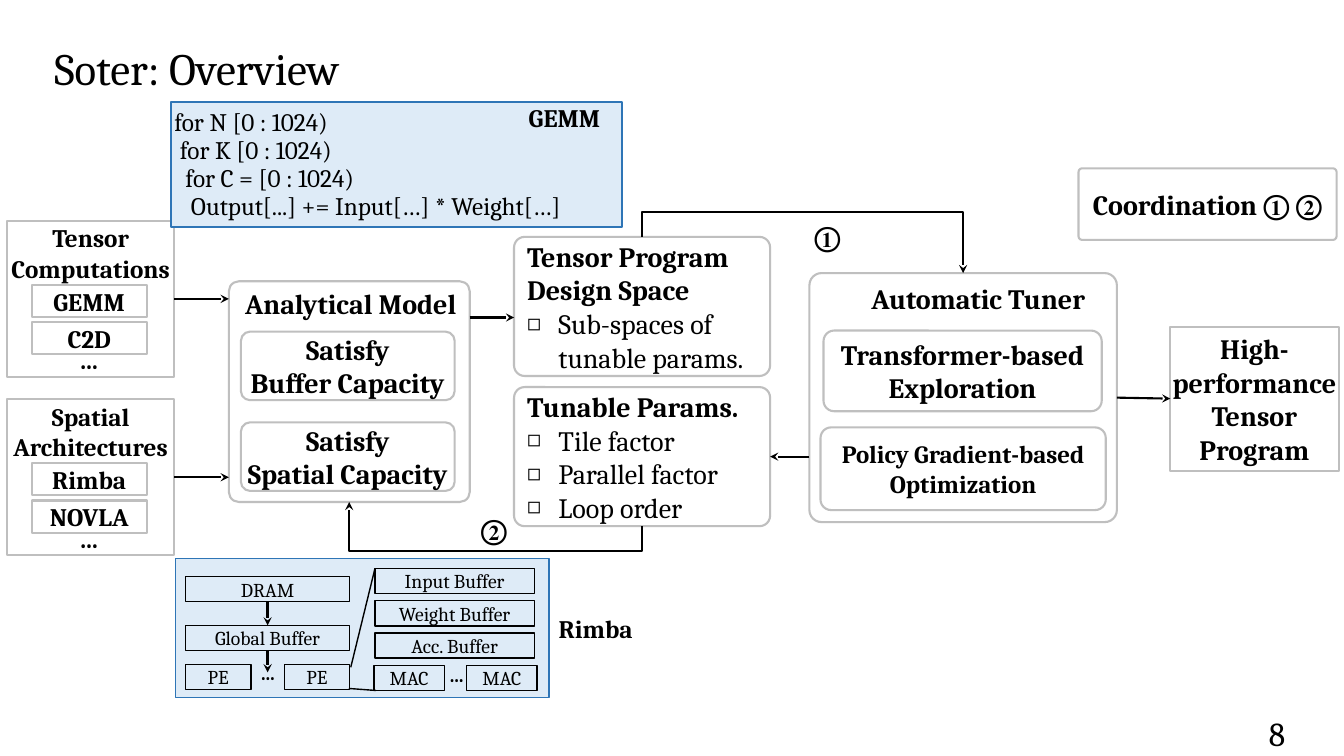
"""Builds the Soter overview slide: tensor program tuning flow and its example inputs."""
import dataclasses
import typing

import lxml.etree
import pptx
import pptx.dml.color
import pptx.enum.shapes
import pptx.enum.text
import pptx.oxml.ns
import pptx.util

BLACK = pptx.dml.color.RGBColor(0x00, 0x00, 0x00)
GREY = pptx.dml.color.RGBColor(0xBF, 0xBF, 0xBF)
BLUE = pptx.dml.color.RGBColor(0x2E, 0x75, 0xB6)
PALE_BLUE = pptx.dml.color.RGBColor(0xDE, 0xEB, 0xF7)
FONT = "Cambria"
CELL = pptx.util.Inches(0.1)
SLIDE_COLUMNS, SLIDE_ROWS = 133.33, 75
ELBOW_REACH = 2.5
ALIGN = pptx.enum.text.PP_ALIGN
SHAPE = pptx.enum.shapes.MSO_SHAPE
CONNECTOR = pptx.enum.shapes.MSO_CONNECTOR


@dataclasses.dataclass(frozen=True)
class Box:
    """A box or plain label, placed in grid columns and rows."""
    column: float
    row: float
    width: float
    height: float
    lines: tuple[str, ...] = ()
    size: float = 20
    bold: bool = True
    line: typing.Optional[pptx.dml.color.RGBColor] = GREY
    weight: float = 1.5
    radius: float = 0
    fill: typing.Optional[pptx.dml.color.RGBColor] = None
    name: str = ""


class Spot(typing.NamedTuple):
    """A free point on the grid."""
    column: float
    row: float


class Joint(typing.NamedTuple):
    """The middle of one side of a named box."""
    name: str
    side: int


class Link(typing.NamedTuple):
    """A line between two ends."""
    start: Spot | Joint
    end: Spot | Joint
    weight: float = 1.5
    arrow: bool = True


class ListBlock(typing.NamedTuple):
    """Heading lines followed by bulleted items."""
    row: float
    headings: tuple[str, ...]
    items: tuple[str, ...]


def grid(cells: float) -> int:
    """Turn grid cells into a length."""
    return round(cells * CELL)


def label(column: float, row: float, width: float, height: float, *lines: str,
          size: float = 20, bold: bool = True) -> Box:
    """Describe text with no outline."""
    return Box(column, row, width, height, lines, size, bold, line=None)


def part(column: float, row: float, width: float, text: str, name: str = "") -> Box:
    """Describe one hardware part of the accelerator."""
    return Box(column, row, width, 2.5, (text,), 14, False, BLACK, 1, name=name)


def input_panel(row: float, title: tuple[str, ...], items: tuple[str, ...], name: str) -> list[Box]:
    """Describe an input panel with its title, items and ellipsis."""
    entries = [Box(3.15, row + 6.35 + 3.7 * index, 11.4, 3.2, (item,), 18)
               for index, item in enumerate(items)]
    return [Box(0.7, row, 16.6, 15.5, name=name), label(0.7, row, 16.6, 6.4, *title, size=18),
            *entries, label(3.15, row + 12.2, 11.4, 3.2, "…", size=18)]


BOXES = [
    *input_panel(21.9, ("Tensor", "Computations"), ("GEMM", "C2D"), "computations"),
    *input_panel(39.6, ("Spatial", "Architectures"), ("Rimba", "NOVLA"), "architectures"),
    Box(51, 23.5, 25.4, 13.8, radius=1.05, name="design space"),
    Box(51, 38.4, 25.4, 13.8, radius=1.05, name="parameters"),
    Box(80.3, 27.1, 30.5, 24.7, radius=1.2, name="tuner"),
    label(81.8, 27.1, 30.5, 5, "Automatic Tuner"),
    Box(81.7, 32.8, 27.6, 8, ("Transformer-based", "Exploration"), radius=1.05),
    Box(81.4, 42.4, 28.3, 8.2, ("Policy Gradient-based", "Optimization"), 17.8, radius=1.05),
    Box(116.1, 32.4, 16.7, 14.3, ("High-performance", "Tensor Program"), name="program"),
    Box(107, 16.7, 25.6, 7.1, ("Coordination ① ②",), radius=0.35),
    label(80.1, 21.4, 4, 4, "①"),
    label(47, 50.5, 4, 4, "②"),
    Box(22.7, 27.9, 23.9, 21.9, radius=1, name="model"),
    label(22.7, 27.6, 24.2, 5, "Analytical Model"),
    Box(23.9, 32.9, 21.2, 6.8, ("Satisfy", "Buffer Capacity"), radius=0.9),
    Box(23.9, 41.9, 21.2, 6.8, ("Satisfy", "Spatial Capacity"), radius=0.9),
    Box(17, 10.1, 44.7, 12.4, line=BLUE, weight=1.25, fill=PALE_BLUE, name="code"),
    label(51.5, 9.7, 9, 4, "GEMM", size=18),
    Box(17.4, 55.4, 37.1, 13.8, line=BLUE, weight=1.25, fill=PALE_BLUE),
    label(54.6, 60.3, 9, 4, "Rimba", size=18),
    part(18.4, 57.2, 16.3, "DRAM", "memory"),
    part(18.4, 62.05, 16.3, "Global Buffer", "global buffer"),
    *[part(column, 65.9, 6.5, "PE") for column in (18.4, 28.2)],
    *[part(37.2, 56.4 + 3.2 * index, 15.8, f"{kind} Buffer")
      for index, kind in enumerate(("Input", "Weight", "Acc."))],
    *[part(column, 66, 7, "MAC") for column in (37.1, 46.3)],
    label(24.6, 65, 4, 3.4, "…", size=14),
    label(43.3, 65.2, 4, 3.4, "…", size=14),
    label(124.7, 70.7, 4, 4, "8", size=24, bold=False),
]
LINKS = [
    Link(Joint("computations", 3), Spot(22.7, 29.65)),
    Link(Joint("architectures", 3), Spot(22.7, 47.35)),
    Link(Spot(46.6, 31.5), Spot(51, 31.5)),
    Link(Spot(80.3, 45.3), Joint("parameters", 3)),
    Link(Joint("tuner", 3), Joint("program", 1)),
    Link(Joint("memory", 2), Joint("global buffer", 0), 1.75),
    Link(Joint("global buffer", 2), Spot(26.55, 66.7), 1.75),
    Link(Spot(37.2, 56.4), Spot(34.8, 66.2), 1, False),
    Link(Spot(37.3, 68.5), Spot(34.6, 68.3), 1, False),
]
ELBOWS = [Link(Spot(63.7, 23.5), Spot(95.55, 27.1)), Link(Spot(63.7, 52.2), Spot(34.65, 49.8))]
LISTS = [
    ListBlock(23.5, ("Tensor Program", "Design Space"), ("Sub-spaces of tunable params.",)),
    ListBlock(38.4, ("Tunable Params.",), ("Tile factor", "Parallel factor", "Loop order")),
]
CODE = ("for N [0 : 1024)", "for K [0 : 1024)", "for C = [0 : 1024)",
        "Output[...] += Input[…] * Weight[…]")


def add_child(parent: typing.Any, tag: str, **attributes: str) -> typing.Any:
    """Append a drawing element."""
    return lxml.etree.SubElement(parent, pptx.oxml.ns.qn(tag), attributes)


def add_line(frame: typing.Any, index: int, text: str, size: float, bold: bool,
             align: ALIGN) -> typing.Any:
    """Write one paragraph of a text frame."""
    paragraph = frame.paragraphs[0] if index == 0 else frame.add_paragraph()
    paragraph.alignment = align
    paragraph.space_before = pptx.util.Pt(0)
    run = paragraph.add_run()
    run.text = text
    run.font.name, run.font.size, run.font.bold = FONT, pptx.util.Pt(size), bold
    run.font.color.rgb = BLACK
    return paragraph


def indent(paragraph: typing.Any, margin: float, first: float) -> typing.Any:
    """Set the paragraph's left margin and first-line indent."""
    properties = paragraph._p.get_or_add_pPr()
    properties.set("marL", str(grid(margin)))
    properties.set("indent", str(grid(first)))
    return properties


def prepare_frame(shape: typing.Any, inset: float = 0) -> typing.Any:
    """Set wrapping, insets and middle anchoring."""
    frame = shape.text_frame
    frame.word_wrap = True
    frame.auto_size = pptx.enum.text.MSO_AUTO_SIZE.NONE
    frame.vertical_anchor = pptx.enum.text.MSO_ANCHOR.MIDDLE
    frame.margin_left = frame.margin_right = grid(inset)
    frame.margin_top = frame.margin_bottom = 0
    return frame


def place(shape: typing.Any, column: float, row: float, width: float, height: float) -> None:
    """Move a placeholder on the grid."""
    shape.left, shape.top, shape.width, shape.height = map(grid, (column, row, width, height))


def draw_box(slide: typing.Any, box: Box) -> typing.Any:
    """Draw a box or label with its text."""
    bounds = [grid(cells) for cells in (box.column, box.row, box.width, box.height)]
    if box.line is None:
        shape = slide.shapes.add_textbox(*bounds)
    else:
        kind = SHAPE.ROUNDED_RECTANGLE if box.radius else SHAPE.RECTANGLE
        shape = slide.shapes.add_shape(kind, *bounds)
        shape.shadow.inherit = False
        shape.line.color.rgb, shape.line.width = box.line, pptx.util.Pt(box.weight)
        if box.radius:
            shape.adjustments[0] = box.radius / min(box.width, box.height)
        if box.fill is None:
            shape.fill.background()
        else:
            shape.fill.solid()
            shape.fill.fore_color.rgb = box.fill
    frame = prepare_frame(shape)
    for index, text in enumerate(box.lines):
        add_line(frame, index, text, box.size, box.bold, ALIGN.CENTER)
    return shape


def style_connector(connector: typing.Any, link: Link) -> None:
    """Set a connector's line and arrowhead."""
    connector.line.color.rgb, connector.line.width = BLACK, pptx.util.Pt(link.weight)
    if link.arrow:
        add_child(connector.line._get_or_add_ln(), "a:tailEnd", type="stealth")
    add_child(connector._element.spPr, "a:effectLst")


def draw_link(slide: typing.Any, link: Link, shapes: dict[str, typing.Any]) -> None:
    """Draw a straight connector, joined where an end is a joint."""
    ends = [end if isinstance(end, Spot) else Spot(0, 0) for end in (link.start, link.end)]
    connector = slide.shapes.add_connector(
        CONNECTOR.STRAIGHT, *[grid(cells) for end in ends for cells in end])
    for end, connect in ((link.start, connector.begin_connect), (link.end, connector.end_connect)):
        if isinstance(end, Joint):
            connect(shapes[end.name], end.side)
    style_connector(connector, link)


def draw_elbow(slide: typing.Any, link: Link) -> None:
    """Draw a turned elbow whose crossbar lies beyond both ends."""
    start, end = link.start, link.end
    across, rise = abs(end.row - start.row) / 2, abs(end.column - start.column) / 2
    column, row = (start.column + end.column) / 2, (start.row + end.row) / 2
    connector = slide.shapes.add_connector(
        CONNECTOR.ELBOW, grid(column + across), grid(row - rise),
        grid(column - across), grid(row + rise))
    properties = connector._element.spPr
    turn = 270 if end.column > start.column else 90
    properties.find(pptx.oxml.ns.qn("a:xfrm")).set("rot", str(turn * 60000))
    geometry = properties.find(pptx.oxml.ns.qn("a:prstGeom"))
    values = geometry.find(pptx.oxml.ns.qn("a:avLst"))
    if values is None:
        values = add_child(geometry, "a:avLst")
    share = round(-ELBOW_REACH / (2 * across) * 100000)
    add_child(values, "a:gd", name="adj1", fmla=f"val {share}")
    style_connector(connector, link)


def fill_list(placeholder: typing.Any, block: ListBlock) -> None:
    """Write headings and bulleted items into a body placeholder."""
    place(placeholder, 51.3, block.row, 24.8, 13.8)
    frame = prepare_frame(placeholder, 1)
    for index, text in enumerate(block.headings + block.items):
        heading = index < len(block.headings)
        paragraph = add_line(frame, index, text, 20, heading, ALIGN.LEFT)
        properties = indent(paragraph, 0 if heading else 3.1, 0 if heading else -3.1)
        if heading:
            add_child(properties, "a:buNone")
        else:
            add_child(properties, "a:buSzPct", val="81000")
            add_child(properties, "a:buChar", char="◻")


def main() -> None:
    """Build and save the slide."""
    presentation = pptx.Presentation()
    presentation.slide_width, presentation.slide_height = grid(SLIDE_COLUMNS), grid(SLIDE_ROWS)
    slide = presentation.slides.add_slide(presentation.slide_layouts[3])
    place(slide.shapes.title, 4.4, 3.5, 111.2, 6.4)
    add_line(prepare_frame(slide.shapes.title, 1), 0, "Soter: Overview", 32, False, ALIGN.LEFT)
    for index, block in enumerate(LISTS, start=1):
        fill_list(slide.placeholders[index], block)
    shapes = {}
    for box in BOXES:
        shapes[box.name] = draw_box(slide, box)
    for index, text in enumerate(CODE):
        paragraph = add_line(shapes["code"].text_frame, index, text, 18, False, ALIGN.LEFT)
        paragraph.line_spacing = pptx.util.Pt(20)
        indent(paragraph, 0.3 + 0.55 * index, 0)
    for link in LINKS:
        draw_link(slide, link, shapes)
    for link in ELBOWS:
        draw_elbow(slide, link)
    presentation.save("out.pptx")


if __name__ == "__main__":
    main()
